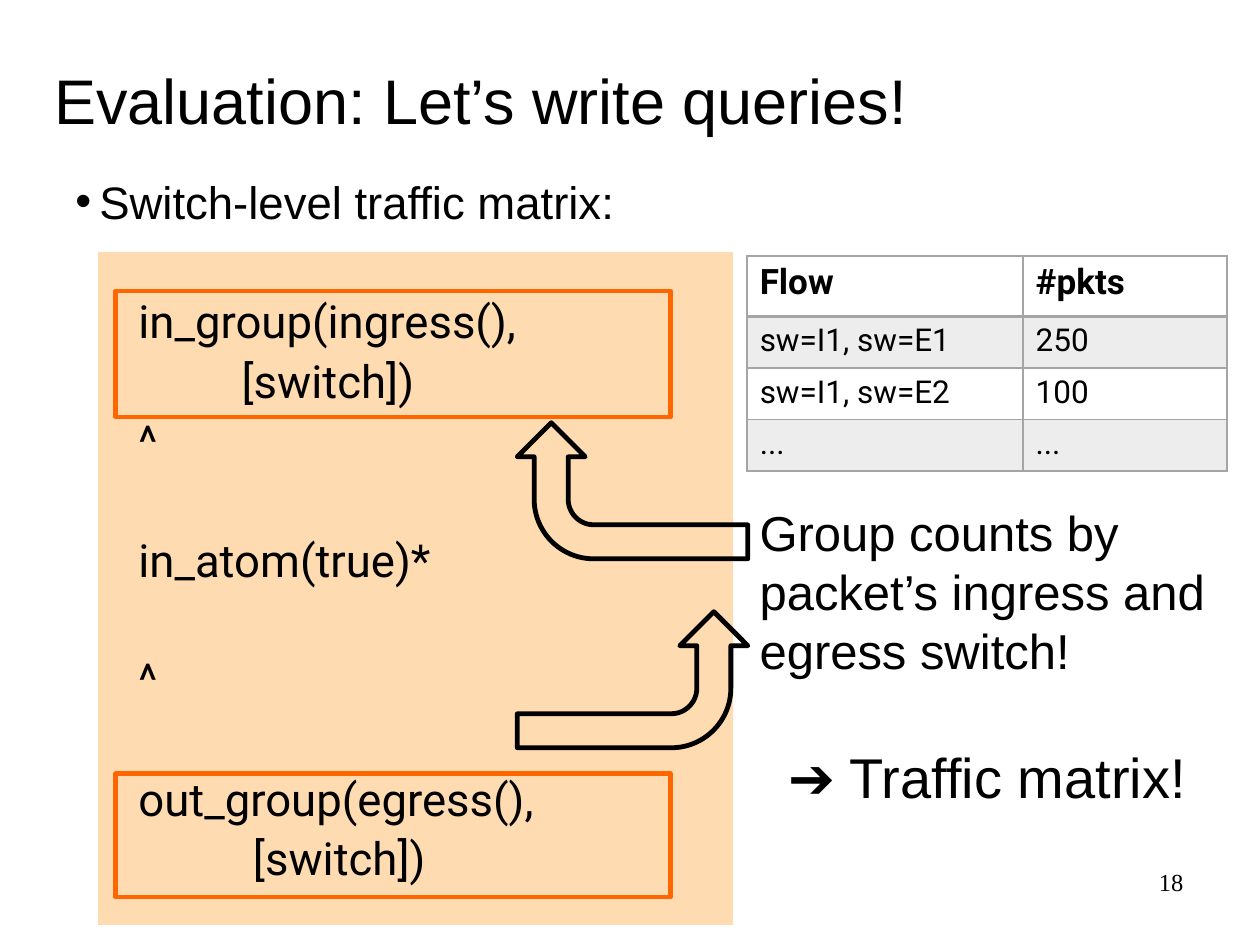
from dataclasses import dataclass

from lxml.etree import SubElement
from pptx import Presentation
from pptx.dml.color import RGBColor
from pptx.enum.shapes import MSO_SHAPE
from pptx.enum.text import MSO_ANCHOR, PP_ALIGN
from pptx.oxml.ns import qn
from pptx.util import Inches, Pt

BLACK, GREY, ORANGE = "000000", "A5A5A5", "FF6600"


@dataclass
class Line:
    text: str
    size: float
    font: str = "Arial"
    align: PP_ALIGN = PP_ALIGN.LEFT
    before: float = 0
    left: float = 0
    bullet: bool = False


@dataclass
class Box:
    left: float
    top: float
    width: float
    height: float

    def lengths(self) -> list:
        return [Inches(v) for v in (self.left, self.top, self.width, self.height)]


def color(code: str) -> RGBColor:
    return RGBColor.from_string(code)


def add_run(para, text: str, size: float, font: str, bold: bool = False) -> None:
    run = para.add_run()
    run.text = text
    run.font.size, run.font.name, run.font.bold = Pt(size), font, bold
    run.font.color.rgb = color(BLACK)


def paint(fill, code: str, alpha: int) -> None:
    fill.solid()
    fill.fore_color.rgb = color(code)
    tint = fill._xPr.find(qn("a:solidFill"))[0]
    SubElement(tint, qn("a:alpha"), val=str(alpha * 1000))


def add_text(slide, box: Box, lines: list[Line]) -> None:
    frame = slide.shapes.add_textbox(*box.lengths()).text_frame
    frame.word_wrap = True
    for i, line in enumerate(lines):
        para = frame.add_paragraph() if i else frame.paragraphs[0]
        para.alignment, para.space_before = line.align, Pt(line.before)
        props = para._p.get_or_add_pPr()
        props.set("marL", str(Inches(line.left)))
        if line.bullet:
            props.set("indent", str(-Inches(line.left)))
            SubElement(props, qn("a:buFont"), typeface="Arial")
            SubElement(props, qn("a:buChar"), char="•")
        add_run(para, line.text, line.size, line.font)


def add_shape(slide, kind: MSO_SHAPE, box: Box, edge: str = ""):
    shape = slide.shapes.add_shape(kind, *box.lengths())
    shape.shadow.inherit = False
    shape.fill.background()
    if edge:
        shape.line.color.rgb = color(edge)
        shape.line.width = Pt(2.75)
    else:
        shape.line.fill.background()
    return shape


def add_edges(cell, base: float, top: float) -> None:
    props = cell._tc.get_or_add_tcPr()
    widths = {"a:lnL": 1, "a:lnR": 1, "a:lnT": top, "a:lnB": base}
    for i, (tag, width) in enumerate(widths.items()):
        edge = props.makeelement(qn(tag), {"w": str(Pt(width))})
        fill = SubElement(edge, qn("a:solidFill"))
        SubElement(fill, qn("a:srgbClr"), val=GREY)
        props.insert(i, edge)


def add_table(slide, box: Box, cols: list[float], rows: list[tuple]) -> None:
    table = slide.shapes.add_table(len(rows), len(cols), *box.lengths()).table
    for col, width in zip(table.columns, cols):
        col.width = Inches(width)
    for r, row in enumerate(rows):
        table.rows[r].height = Inches(0.41 if r else 0.48)
        for c, text in enumerate(row):
            cell = table.cell(r, c)
            add_run(cell.text_frame.paragraphs[0], text,
                    18 if r else 20, "Roboto", bold=r == 0)
            if r % 2:
                paint(cell.fill, GREY, 20)
            else:
                cell.fill.background()
            add_edges(cell, 1 if r else 2, 2 if r == 1 else 1)


def main() -> None:
    deck = Presentation()
    deck.slide_width, deck.slide_height = Inches(10), Inches(7.5)
    slide = deck.slides.add_slide(deck.slide_layouts[5])

    # Title
    title = slide.shapes.title
    title.left, title.top, title.width, title.height = Box(0.33, 0.42, 8.82, 0.74).lengths()
    title.text_frame.vertical_anchor = MSO_ANCHOR.MIDDLE
    head = title.text_frame.paragraphs[0]
    head.alignment = PP_ALIGN.LEFT
    add_run(head, "Evaluation: Let’s write queries!", 36, "Arial")

    # Query panel, with wider gaps between its terms
    panel = add_shape(slide, MSO_SHAPE.RECTANGLE, Box(0.78, 2, 5.04, 5.34))
    paint(panel.fill, "FF8A01", 30)
    near, far = 3, 37
    code = [
        ("in_group(ingress(),", far, 0.5),
        ("[switch])", near, 1.32),
        ("^", near, 0.5),
        ("in_atom(true)*", far, 0.5),
        ("^", far, 0.5),
        ("out_group(egress(),", far, 0.5),
        ("[switch])", near, 1.41),
    ]
    lines = [Line("Switch-level traffic matrix:", 26, left=0.19, bullet=True)]
    lines += [Line(t, 26, "Roboto", before=gap, left=left) for t, gap, left in code]
    add_text(slide, Box(0.5, 1.33, 9.24, 5.99), lines)

    # Bent arrows, the lower one mirrored
    for top, flip in ((2.98, False), (4.48, True)):
        arrow = add_shape(slide, MSO_SHAPE.BENT_ARROW, Box(4.48, top, 1.08, 1.83), BLACK)
        arrow.rotation = 270
        if flip:
            arrow._element.spPr.find(qn("a:xfrm")).set("flipV", "1")

    # Remarks and page number
    add_text(slide, Box(5.93, 3.94, 3.81, 1.51), [
        Line("Group counts by", 28),
        Line("packet’s ingress and egress switch!", 28),
    ])
    add_text(slide, Box(5.93, 5.84, 3.81, 0.64),
             [Line("➔ Traffic matrix!", 32, align=PP_ALIGN.CENTER)])
    add_text(slide, Box(7.17, 6.83, 2.32, 0.51),
             [Line("18", 14, "Times New Roman", PP_ALIGN.RIGHT)])

    # Packet counts
    add_table(slide, Box(5.93, 2.03, 3.81, 1.7), [2.19, 1.62], [
        ("Flow", "#pkts"),
        ("sw=I1, sw=E1", "250"),
        ("sw=I1, sw=E2", "100"),
        ("...", "..."),
    ])

    # Frames around the two groups
    for top, height in ((2.31, 1), (6.14, 0.98)):
        add_shape(slide, MSO_SHAPE.RECTANGLE, Box(0.92, top, 4.4, height), ORANGE)

    deck.save("out.pptx")


if __name__ == "__main__":
    main()
